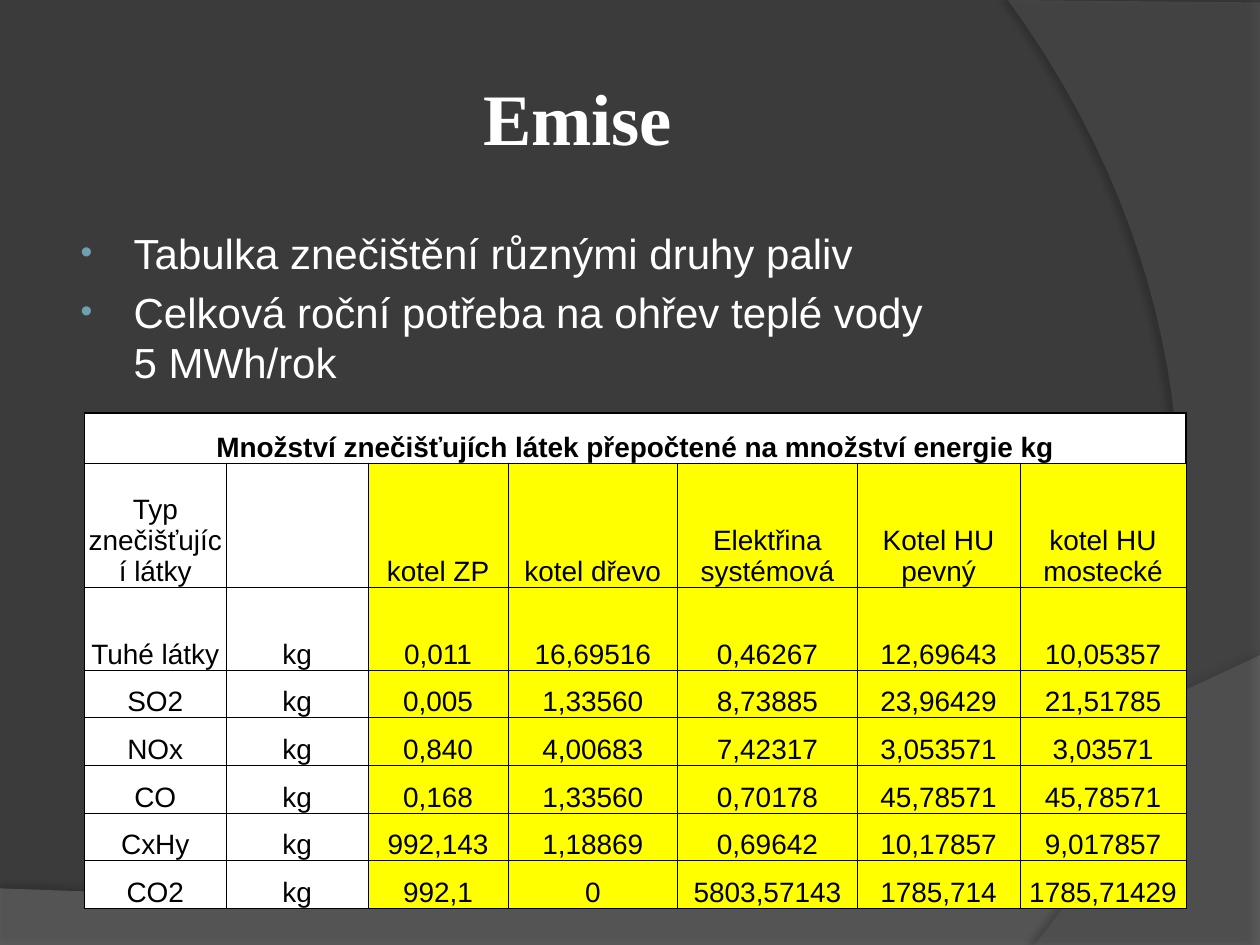
"""Build the slide on emissions from different fuels."""
import pptx
import pptx.dml.color
import pptx.enum.text
import pptx.oxml
import pptx.oxml.ns
import pptx.util

Cm, Pt = pptx.util.Cm, pptx.util.Pt
ALIGN, ANCHOR = pptx.enum.text.PP_ALIGN, pptx.enum.text.MSO_ANCHOR

HEADING = "Emise"
POINTS = [
    "Tabulka znečištění různými druhy paliv",
    "Celková roční potřeba na ohřev teplé vody\n5 MWh/rok",
]
CAPTION = "Množství znečišťujích látek přepočtené na množství energie kg"
FUELS = ["Typ znečišťující látky", "", "kotel ZP", "kotel dřevo",
         "Elektřina systémová", "Kotel HU pevný", "kotel HU mostecké"]
EMISSIONS = {
    "Tuhé látky": ["0,011", "16,69516", "0,46267", "12,69643", "10,05357"],
    "SO2": ["0,005", "1,33560", "8,73885", "23,96429", "21,51785"],
    "NOx": ["0,840", "4,00683", "7,42317", "3,053571", "3,03571"],
    "CO": ["0,168", "1,33560", "0,70178", "45,78571", "45,78571"],
    "CxHy": ["992,143", "1,18869", "0,69642", "10,17857", "9,017857"],
    "CO2": ["992,1", "0", "5803,57143", "1785,714", "1785,71429"],
}
UNIT = "kg"
COLUMN_WIDTHS = [2.86, 2.86, 2.82, 3.42, 3.62, 3.28, 3.35]
ROW_HEIGHTS = [1.01, 2.5, 1.67] + [0.96] * 5

THEME = {
    "background": "3B3B3B", "light": "FFFFFF", "dark": "000000",
    "bullet": "6EA0B0", "label": "FFFFFF", "value": "FFFF00",
    "heading_font": "Times New Roman", "font": "Arial",
    "heading_size": 41.4, "point_size": 24, "cell_size": 16,
}

WAVES = [
    {"corners": [(0, 17.91), (0, 19.05), (25.4, 19.05)],
     "curve": [(25.4, 13.21), (14.2, 18.52), (9.93, 18.26), (0, 17.91)],
     "color": "7F7F7F", "alpha": 45, "shade": 35, "distance": 3.5, "angle": 270},
    {"corners": [(25.4, 0.05), (25.4, 19.05)],
     "curve": [(20.85, 19.05), (23.75, 15.72), (25.86, 7.62), (20.32, 0)],
     "color": "5E5E5E", "alpha": 40, "shade": 45, "distance": 4, "angle": 180},
]


def rgb(name):
    return pptx.dml.color.RGBColor.from_string(THEME.get(name, name))


def xml(tag, attributes="", inner=""):
    return pptx.oxml.parse_xml(
        f'<a:{tag} {pptx.oxml.ns.nsdecls("a")} {attributes}>{inner}</a:{tag}>')


def write(paragraph, text, size, color="dark", font="font", bold=False,
          align=ALIGN.CENTER):
    paragraph.text = text
    paragraph.alignment = align
    for run in paragraph.runs:
        run.font.size = Pt(THEME[size])
        run.font.name = THEME[font]
        run.font.bold = bold
        run.font.color.rgb = rgb(color)


def place(shape, left, top, width, height):
    shape.left, shape.top = Cm(left), Cm(top)
    shape.width, shape.height = Cm(width), Cm(height)


def bezier(start, first, second, end, steps=40):
    for step in range(steps + 1):
        t = step / steps
        u = 1 - t
        yield tuple(u**3 * a + 3 * u * u * t * b + 3 * u * t * t * c + t**3 * d
                    for a, b, c, d in zip(start, first, second, end))


def add_wave(slide, wave):
    outline = [(Cm(x), Cm(y)) for x, y in wave["corners"] + list(bezier(*wave["curve"]))]
    builder = slide.shapes.build_freeform(*outline[0])
    builder.add_line_segments(outline[1:], close=True)
    shape = builder.convert_to_shape()
    shape.fill.solid()
    shape.fill.fore_color.rgb = rgb(wave["color"])
    shape.line.fill.background()
    fill_color = next(shape.element.spPr.iter(pptx.oxml.ns.qn("a:srgbClr")))
    fill_color.append(xml("alpha", f'val="{wave["alpha"] * 1000}"'))
    shape.shadow.inherit = False
    effects = shape.element.spPr.find(pptx.oxml.ns.qn("a:effectLst"))
    effects.append(xml(
        "outerShdw",
        f'blurRad="{Pt(4)}" dist="{Pt(wave["distance"])}" '
        f'dir="{wave["angle"] * 60000}" rotWithShape="0"',
        f'<a:srgbClr val="{THEME["dark"]}"><a:alpha val="{wave["shade"] * 1000}"/></a:srgbClr>'))
    slide.shapes.title.element.addprevious(shape.element)


def add_points(body):
    place(body, 1.27, 4.45, 20.75, 12.57)
    frame = body.text_frame
    frame.auto_size = pptx.enum.text.MSO_AUTO_SIZE.NONE
    for index, point in enumerate(POINTS):
        paragraph = frame.add_paragraph() if index else frame.paragraphs[0]
        write(paragraph, point, "point_size", color="light", align=ALIGN.LEFT)
        paragraph.space_before = Pt(5)
        properties = paragraph._p.get_or_add_pPr()
        properties.set("marL", str(Cm(1.17)))
        properties.set("indent", str(-Cm(1.07)))
        properties.append(xml("buClr", inner=f'<a:srgbClr val="{THEME["bullet"]}"/>'))
        properties.append(xml("buSzPct", 'val="80000"'))
        properties.append(xml("buFont", f'typeface="{THEME["font"]}"'))
        properties.append(xml("buChar", 'char="•"'))


def add_emissions(slide):
    rows = [[CAPTION] + [""] * (len(FUELS) - 1), FUELS]
    rows += [[substance, UNIT] + values for substance, values in EMISSIONS.items()]
    frame = slide.shapes.add_table(
        len(rows), len(FUELS), Cm(1.7), Cm(8.33),
        Cm(sum(COLUMN_WIDTHS)), Cm(sum(ROW_HEIGHTS)))
    table = frame.table
    for column, width in zip(table.columns, COLUMN_WIDTHS):
        column.width = Cm(width)
    for row, height in zip(table.rows, ROW_HEIGHTS):
        row.height = Cm(height)
    table.cell(0, 0).merge(table.cell(0, len(FUELS) - 1))

    cell_elements = frame.element.iter(pptx.oxml.ns.qn("a:tc"))
    for index, (cell, element) in enumerate(zip(table.iter_cells(), cell_elements)):
        row, column = divmod(index, len(FUELS))
        for side in "LRTB":
            heavy = row == 0 or (row == 1 and side == "T")
            element.get_or_add_tcPr().append(xml(
                f"ln{side}", f'w="{Pt(1 if heavy else 0.5)}"',
                f'<a:solidFill><a:srgbClr val="{THEME["dark"]}"/></a:solidFill>'))
        cell.fill.solid()
        cell.fill.fore_color.rgb = rgb("value" if row and column > 1 else "label")
        cell.vertical_anchor = ANCHOR.BOTTOM
        cell.margin_left = cell.margin_right = cell.margin_top = Cm(0.03)
        cell.margin_bottom = 0
        if rows[row][column]:
            write(cell.text_frame.paragraphs[0], rows[row][column], "cell_size",
                  bold=row == 0)


def main():
    deck = pptx.Presentation()
    deck.slide_width, deck.slide_height = Cm(25.4), Cm(19.05)
    slide = deck.slides.add_slide(deck.slide_layouts[1])
    slide.background.fill.solid()
    slide.background.fill.fore_color.rgb = rgb("background")
    for wave in WAVES:
        add_wave(slide, wave)

    title = slide.shapes.title
    place(title, 1.27, 0.76, 20.75, 3.18)
    title.text_frame.vertical_anchor = ANCHOR.MIDDLE
    write(title.text_frame.paragraphs[0], HEADING, "heading_size", color="light",
          font="heading_font", bold=True)
    add_points(slide.placeholders[1])
    add_emissions(slide)
    deck.save("out.pptx")


if __name__ == "__main__":
    main()
